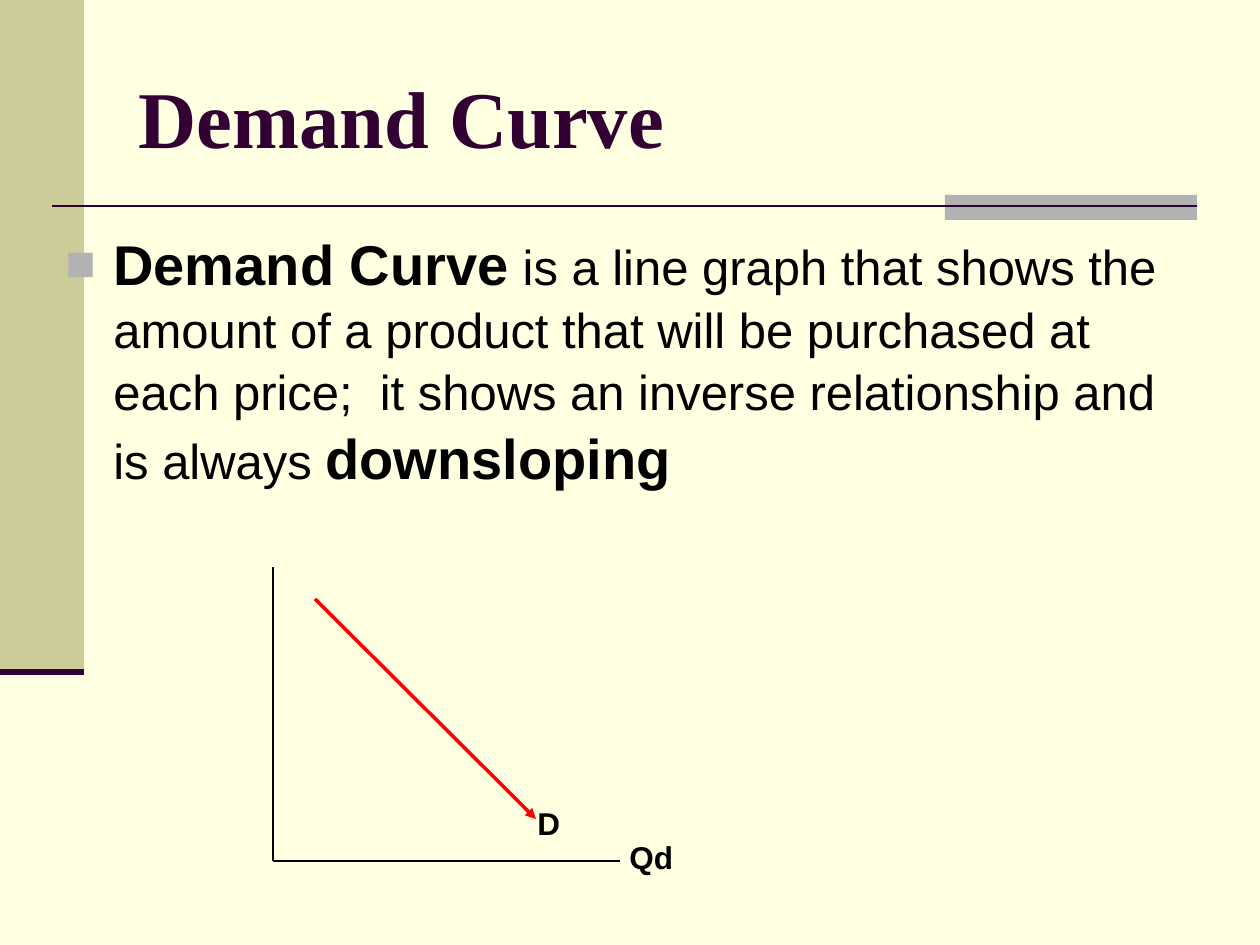
from dataclasses import dataclass

from lxml.etree import SubElement
from pptx import Presentation
from pptx.dml.color import RGBColor
from pptx.enum.shapes import MSO_CONNECTOR as CONN, MSO_SHAPE as SHAPE
from pptx.enum.text import MSO_ANCHOR as ANCHOR, PP_ALIGN as ALIGN
from pptx.oxml.ns import qn
from pptx.util import Emu, Pt

PX_PER_INCH = 126
PURPLE, OLIVE, GREY = "330033", "CCCC99", "B2B2B2"
BLACK, RED, CREAM = "000000", "FF0000", "FFFFE1"


@dataclass
class Bar:
    box: tuple[int, int, int, int]
    color: str


@dataclass
class Line:
    ends: tuple[int, int, int, int]
    color: str
    width: float
    arrow: bool = False


@dataclass
class Run:
    text: str
    size: int
    bold: bool = True
    font: str = "Arial"
    color: str = BLACK


@dataclass
class Label:
    box: tuple[int, int, int, int]
    text: str


def px(n: int) -> Emu:
    return Emu(round(n * 914400 / PX_PER_INCH))


def rgb(color: str) -> RGBColor:
    return RGBColor.from_string(color)


def add_bar(s, bar: Bar) -> None:
    sp = s.shapes.add_shape(SHAPE.RECTANGLE, *map(px, bar.box))
    sp.shadow.inherit = False
    sp.fill.solid()
    sp.fill.fore_color.rgb = rgb(bar.color)
    sp.line.fill.background()


def add_line(s, line: Line) -> None:
    c = s.shapes.add_connector(CONN.STRAIGHT, *map(px, line.ends))
    c.line.color.rgb = rgb(line.color)
    c.line.width = Pt(line.width)
    if line.arrow:
        SubElement(c.line._get_or_add_ln(), qn("a:tailEnd"), type="triangle")
    SubElement(c._element.spPr, qn("a:effectLst"))


def add_runs(p, runs: list[Run]) -> None:
    for run in runs:
        r = p.add_run()
        r.text = run.text
        fmt = {"size": Pt(run.size), "bold": run.bold, "name": run.font}
        for key, value in fmt.items():
            setattr(r.font, key, value)
        r.font.color.rgb = rgb(run.color)


def add_text(s, box: tuple[int, int, int, int], runs: list[Run], wrap: bool):
    tf = s.shapes.add_textbox(*map(px, box)).text_frame
    tf.word_wrap = wrap
    p = tf.paragraphs[0]
    add_runs(p, runs)
    return p


def add_bullet(p, color: str) -> None:
    pPr = p._p.get_or_add_pPr()
    pPr.set("marL", str(px(48)))
    pPr.set("indent", str(-px(48)))
    SubElement(SubElement(pPr, qn("a:buClr")), qn("a:srgbClr"), val=color)
    SubElement(pPr, qn("a:buSzPct"), val="90000")
    SubElement(pPr, qn("a:buFont"), typeface="Arial")
    SubElement(pPr, qn("a:buChar"), char="■")


def set_title(s, box: tuple[int, int, int, int], run: Run) -> None:
    sp = s.shapes.title
    for key, value in zip(("left", "top", "width", "height"), box):
        setattr(sp, key, px(value))
    tf = sp.text_frame
    tf.vertical_anchor = ANCHOR.MIDDLE
    p = tf.paragraphs[0]
    p.alignment = ALIGN.LEFT
    add_runs(p, [run])


BARS = [
    Bar((0, 0, 84, 672), OLIVE),
    Bar((945, 195, 252, 25), GREY),
]
RULES = [
    Line((52, 206, 1197, 206), PURPLE, 1.5),
    Line((0, 672, 84, 672), PURPLE, 3.5),
]
GRAPH = [
    Line((273, 567, 273, 861), BLACK, 0.75),
    Line((273, 861, 620, 861), BLACK, 0.75),
    Line((315, 599, 536, 819), RED, 2, arrow=True),
]
LABELS = [
    Label((525, 798, 53, 50), "D"),
    Label((617, 832, 69, 50), "Qd"),
]
DEFINITION = [
    Run("Demand Curve", 32),
    Run(" is a line graph that shows the amount of a product that will be "
        "purchased at each price;  it shows an inverse relationship and "
        "is always ", 28, bold=False),
    Run("downsloping", 32),
]


def main() -> None:
    prs = Presentation()
    prs.slide_width, prs.slide_height = px(1260), px(945)
    s = prs.slides.add_slide(prs.slide_layouts[5])
    s.background.fill.solid()
    s.background.fill.fore_color.rgb = rgb(CREAM)

    for bar in BARS:
        add_bar(s, bar)
    for line in RULES:
        add_line(s, line)
    set_title(s, (126, 38, 1071, 157),
              Run("Demand Curve", 46, font="Times New Roman", color=PURPLE))
    p = add_text(s, (53, 220, 1144, 624), DEFINITION, wrap=True)
    p.line_spacing = 1.05
    p.space_before = Pt(2)
    add_bullet(p, GREY)
    for line in GRAPH:
        add_line(s, line)
    for label in LABELS:
        add_text(s, label.box, [Run(label.text, 18)], wrap=False)
    prs.save("out.pptx")


if __name__ == "__main__":
    main()
